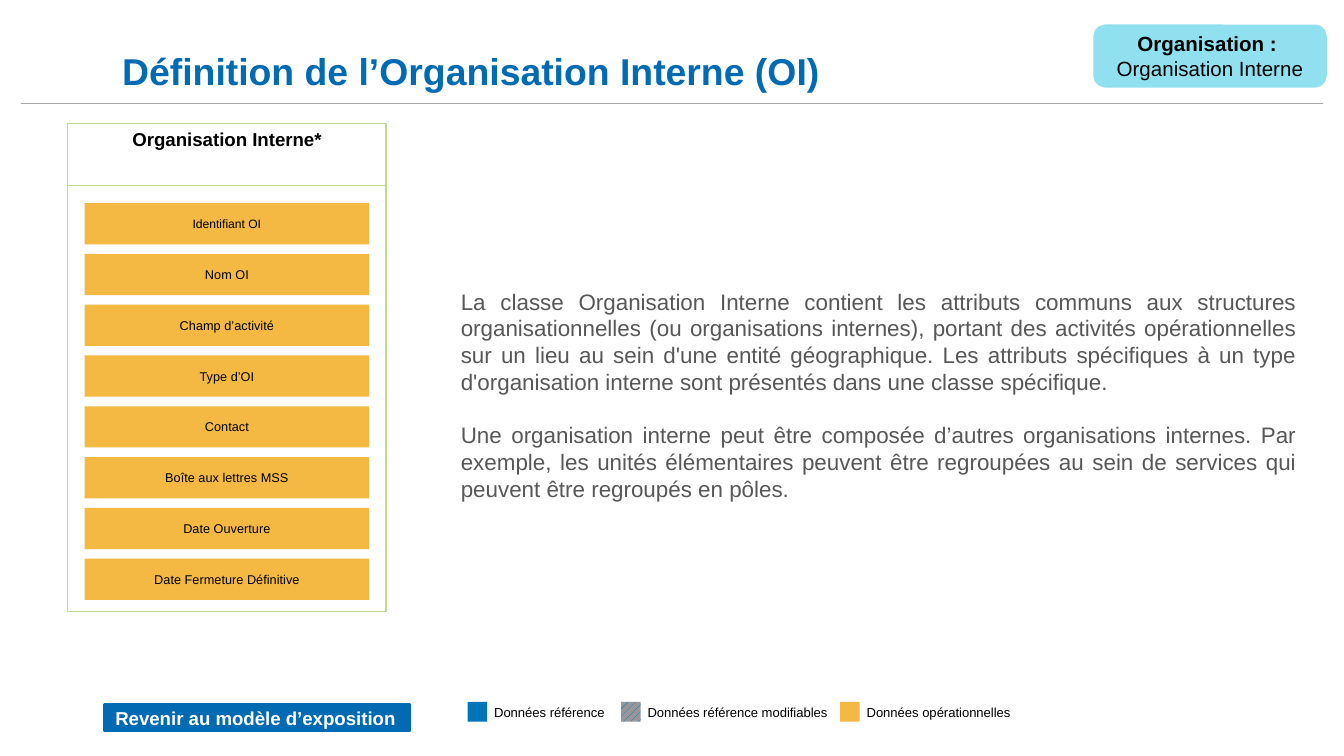
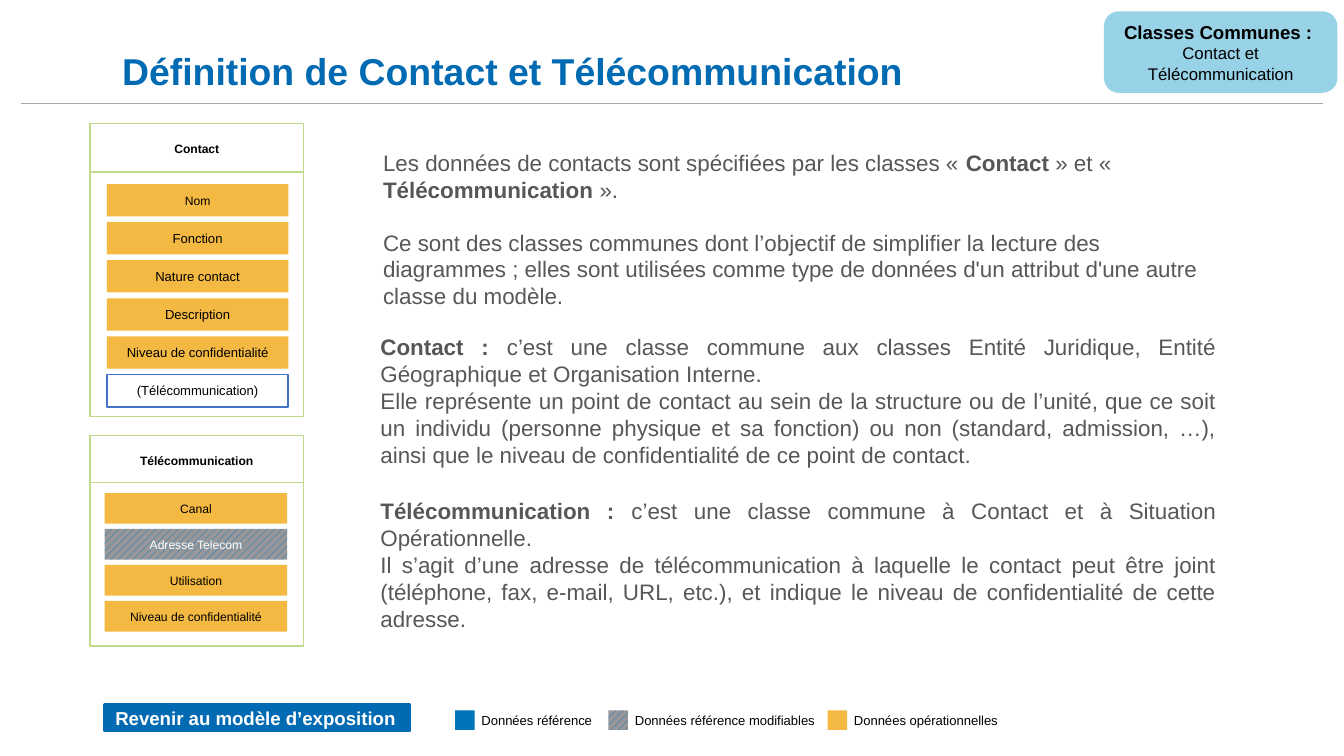
from pptx import Presentation
from pptx import util as u
from pptx.dml.color import RGBColor
from pptx.enum import dml, shapes, text
from pptx.oxml.ns import qn
from lxml import etree

COLORS = {
    "blue": "006AB2",
    "reference": "0074BA",
    "hatch": "97979B",
    "operational": "F4B942",
    "card": "BFDA8B",
    "frame": "4472C4",
    "grey": "575757",
    "rule": "A6A6A6",
    "organisation": "90E0EF",
    "common": "98D2E7",
    "black": "000000",
    "white": "FFFFFF",
}
FONT = "Arial"
ALIGN = text.PP_ALIGN
ANCHOR = text.MSO_ANCHOR
HATCHED = "Adresse Telecom"
OUTLINED = "(Télécommunication)"
LEGEND = [
    ("Données référence", "reference", 0, 3),
    ("Données référence modifiables", "hatch", 2.9, 4.14),
    ("Données opérationnelles", "operational", 7.04, 3.86),
]


def rgb(name):
    return RGBColor.from_string(COLORS[name])


def write(sp, lines, size=12, color="grey", bold=False, align=ALIGN.LEFT,
          anchor=ANCHOR.MIDDLE, insets=(0.25, 0.13), gap=0, leading=None):
    """Text between bars is bold; size may be one value or one per line."""
    tf = sp.text_frame
    tf.word_wrap = True
    tf.vertical_anchor = anchor
    tf.margin_left = tf.margin_right = u.Cm(insets[0])
    tf.margin_top = tf.margin_bottom = u.Cm(insets[1])
    sizes = size if isinstance(size, tuple) else (size,) * len(lines)
    for i, (line, points) in enumerate(zip(lines, sizes)):
        p = tf.add_paragraph() if i else tf.paragraphs[0]
        p.alignment = align
        if i and gap:
            p.space_before = u.Pt(gap)
        if leading:
            p.line_spacing = u.Pt(leading)
        for j, part in enumerate(line.split("|")):
            if not part:
                continue
            r = p.add_run()
            r.text = part
            r.font.name = FONT
            r.font.size = u.Pt(points)
            r.font.bold = bold or j % 2 == 1
            r.font.color.rgb = rgb(color)
    return sp


def add_text(s, box, lines, **fmt):
    return write(s.shapes.add_textbox(*map(u.Cm, box)), lines, **fmt)


def add_box(s, box, fill=None, line=None, width=0.75,
            kind=shapes.MSO_SHAPE.RECTANGLE):
    sp = s.shapes.add_shape(kind, *map(u.Cm, box))
    sp.shadow.inherit = False
    if fill == "hatch":
        sp.fill.patterned()
        sp.fill.pattern = dml.MSO_PATTERN.WIDE_UPWARD_DIAGONAL
        sp.fill.fore_color.rgb = rgb("reference")
        sp.fill.back_color.rgb = rgb("hatch")
    elif fill:
        sp.fill.solid()
        sp.fill.fore_color.rgb = rgb(fill)
    else:
        sp.fill.background()
    if line:
        sp.line.color.rgb = rgb(line)
        sp.line.width = u.Pt(width)
    else:
        sp.line.fill.background()
    return sp


def add_rule(s):
    c = s.shapes.add_connector(shapes.MSO_CONNECTOR.STRAIGHT,
                               *map(u.Cm, (0.4, 1.96, 25, 1.96)))
    c.line.color.rgb = rgb("rule")
    c.line.width = u.Pt(0.25)
    etree.SubElement(c._element.spPr, qn("a:effectLst"))


def add_tag(s, box, color, lines, size):
    sp = add_box(s, box, color, color, 2, shapes.MSO_SHAPE.ROUNDED_RECTANGLE)
    write(sp, lines, size=size, color="black", align=ALIGN.CENTER)


def add_card(s, title, box, header, title_size, title_inset):
    left, top, width, height = box
    add_box(s, (left, top + header, width, height - header), line="card")
    sp = add_box(s, (left, top, width, header), line="card")
    write(sp, [title], size=title_size, color="black", bold=True,
          align=ALIGN.CENTER, anchor=ANCHOR.TOP, insets=(0.08, title_inset))


def add_attributes(s, names, first, pitch, size):
    left, top, width, height = first
    for i, name in enumerate(names):
        box = (left, top + i * pitch, width, height)
        if name == OUTLINED:
            sp = add_box(s, box, "white", "frame", 1)
        else:
            sp = add_box(s, box, "hatch" if name == HATCHED else "operational")
        write(sp, [name], size=size if i else 6.5, align=ALIGN.CENTER,
              color="white" if name == HATCHED else "black", insets=(0.08, 0))


def add_legend(s, left, top):
    for label, color, dx, width in LEGEND:
        add_box(s, (left + dx, top + 0.09, 0.37, 0.37), color)
        add_text(s, (left + dx + 0.25, top, width, 0.56), [label], size=7,
                 color="black", anchor=ANCHOR.TOP)


def add_slide(prs, title, width, legend):
    s = prs.slides.add_slide(prs.slide_layouts[6])
    add_rule(s)
    add_text(s, (2.31, 0.25, width, 1.5), [title], size=20, color="blue",
             bold=True, anchor=ANCHOR.BOTTOM, insets=(0, 0), leading=22)
    add_legend(s, *legend)
    sp = add_box(s, (1.98, 13.31, 5.77, 0.51), "blue", "blue", 1.5)
    write(sp, ["Revenir au modèle d’exposition"], size=10, color="white",
          bold=True, insets=(0.2, 0))
    return s


def build_organisation(prs):
    s = add_slide(prs, "Définition de l’Organisation Interne (OI)", 18,
                  (8.84, 13.18))
    add_tag(s, (20.7, 0.5, 4.34, 1.12), "organisation",
            ["|Organisation : ", "Organisation Interne"], 11)
    add_card(s, "Organisation Interne*", (1.28, 2.34, 6.02, 9.22), 1.17, 10, 0.08)
    add_attributes(s, ["Identifiant OI", "Nom OI", "Champ d’activité",
                       "Type d’OI", "Contact", "Boîte aux lettres MSS",
                       "Date Ouverture", "Date Fermeture Définitive"],
                   (1.6, 3.84, 5.38, 0.78), 0.96, 6.8)
    add_text(s, (8.51, 4.17, 16.21, 6.58), [
        "La classe Organisation Interne contient les attributs communs aux "
        "structures organisationnelles (ou organisations internes), portant "
        "des activités opérationnelles sur un lieu au sein d'une entité "
        "géographique. Les attributs spécifiques à un type d'organisation "
        "interne sont présentés dans une classe spécifique.",
        "Une organisation interne peut être composée d’autres organisations "
        "internes. Par exemple, les unités élémentaires peuvent être "
        "regroupées au sein de services qui peuvent être regroupés en pôles.",
    ], align=ALIGN.JUSTIFY, insets=(0.2, 0), gap=13.8)


def build_contact(prs):
    s = add_slide(prs, "Définition de Contact et Télécommunication", 18,
                  (8.6, 13.34))
    add_tag(s, (20.9, 0.25, 4.34, 1.47), "common",
            ["|Classes Communes : ", "Contact et Télécommunication"], (10, 9))
    add_card(s, "Contact", (1.7, 2.34, 4.04, 5.53), 0.91, 6.5, 0.34)
    add_attributes(s, ["Nom", "Fonction", "Nature contact", "Description",
                       "Niveau de confidentialité", OUTLINED],
                   (2.02, 3.48, 3.43, 0.61), 0.72, 7)
    add_card(s, "Télécommunication", (1.7, 8.23, 4.04, 3.98), 0.89, 6.5, 0.34)
    add_attributes(s, ["Canal", HATCHED, "Utilisation",
                       "Niveau de confidentialité"],
                   (1.98, 9.32, 3.45, 0.58), 0.68, 6.5)
    add_text(s, (6.99, 2.69, 16.21, 3.33), [
        "Les données de contacts sont spécifiées par les classes « |Contact"
        "| » et « |Télécommunication| ».",
        "Ce sont des classes communes dont l’objectif de simplifier la "
        "lecture des diagrammes ; elles sont utilisées comme type de données "
        "d'un attribut d'une autre classe du modèle.",
    ], anchor=ANCHOR.TOP, gap=13.8)
    definitions = [
        (6.02, 3.1, [
            "|Contact : |c’est une classe commune aux classes Entité "
            "Juridique, Entité Géographique et Organisation Interne.",
            "Elle représente un point de contact au sein de la structure ou "
            "de l’unité, que ce soit un individu (personne physique et sa "
            "fonction) ou non (standard, admission, …), ainsi que le niveau "
            "de confidentialité de ce point de contact."]),
        (9.4, 2.54, [
            "|Télécommunication : |c’est une classe commune à Contact et à "
            "Situation Opérationnelle.",
            "Il s’agit d’une adresse de télécommunication à laquelle le "
            "contact peut être joint (téléphone, fax, e-mail, URL, etc.), et "
            "indique le niveau de confidentialité de cette adresse."]),
    ]
    for top, height, lines in definitions:
        add_text(s, (6.99, top, 16.21, height), lines, align=ALIGN.JUSTIFY,
                 insets=(0.2, 0))


def main():
    prs = Presentation()
    prs.slide_width = u.Cm(25.4)
    prs.slide_height = u.Cm(14.29)
    build_organisation(prs)
    build_contact(prs)
    prs.save("out.pptx")


if __name__ == "__main__":
    main()
